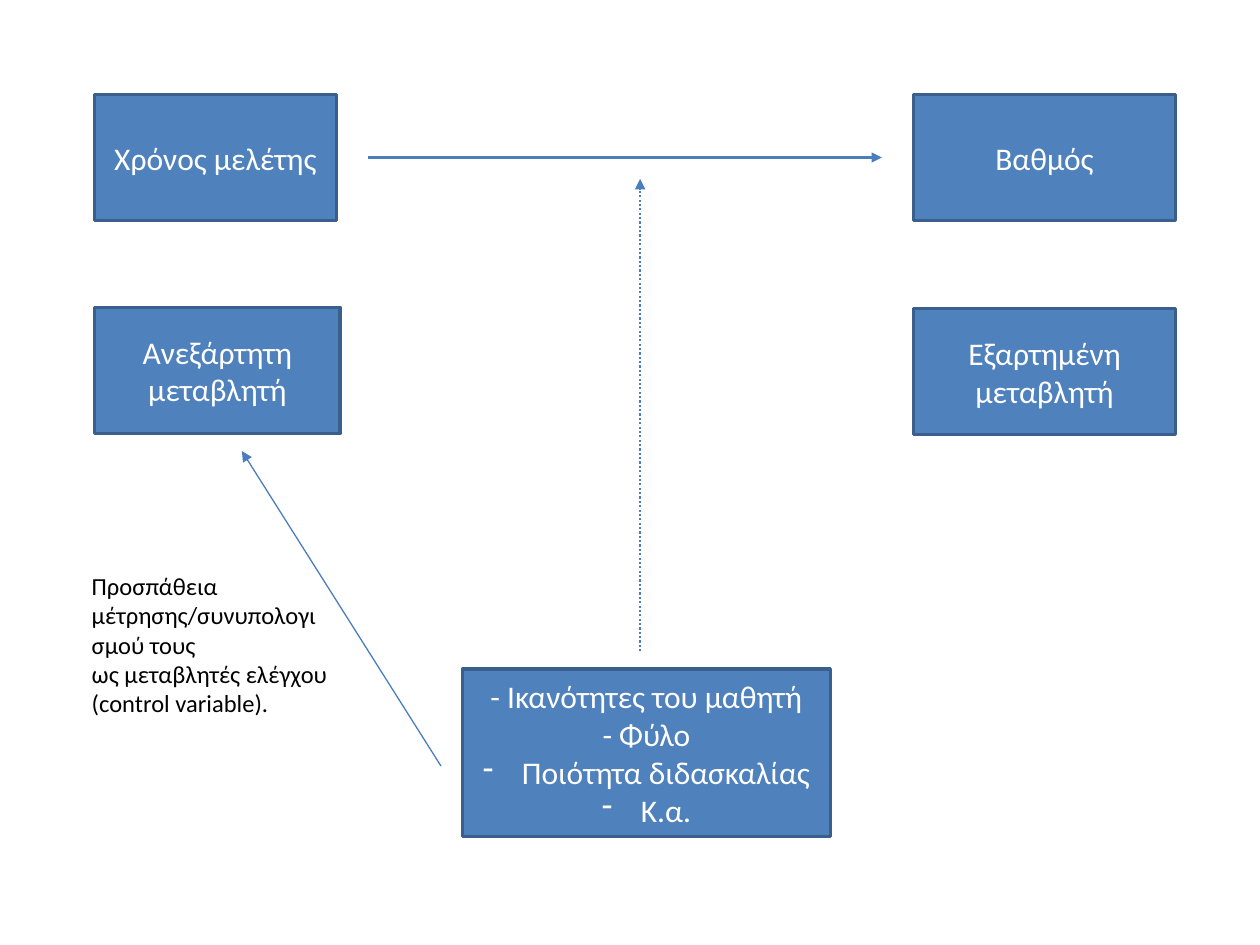
from lxml import etree
from pptx import Presentation
from pptx.dml.color import RGBColor
from pptx.enum.dml import MSO_LINE
from pptx.enum.shapes import MSO_CONNECTOR, MSO_SHAPE
from pptx.enum.text import MSO_ANCHOR, MSO_AUTO_SIZE, PP_ALIGN
from pptx.oxml.ns import qn
from pptx.util import Inches, Pt

RECT = MSO_SHAPE.RECTANGLE
LINE = MSO_CONNECTOR.STRAIGHT
DOTS = MSO_LINE.ROUND_DOT
CENTER = PP_ALIGN.CENTER
MIDDLE = MSO_ANCHOR.MIDDLE
FIT = MSO_AUTO_SIZE.SHAPE_TO_FIT_TEXT

COLORS = {"fill": "4F81BD", "edge": "3A5F8C", "arrow": "4B7EBC",
          "light": "FFFFFF", "dark": "000000"}
FONT = "Calibri"
INDENT = Inches(0.31)

# Left, top, width, height; then paragraphs as (text, has a dash bullet)
BOXES = [
    ((0.75, 0.75, 1.92, 1), [("Χρόνος μελέτης", False)]),
    ((7.25, 0.75, 2.08, 1), [("Βαθμός", False)]),
    ((0.75, 2.44, 1.95, 1), [("Ανεξάρτητη μεταβλητή", False)]),
    ((7.25, 2.45, 2.08, 1), [("Εξαρτημένη μεταβλητή", False)]),
    ((3.67, 5.31, 2.92, 1.33), [("- Ικανότητες του μαθητή", False),
                                ("- Φύλο", False),
                                ("Ποιότητα διδασκαλίας", True),
                                ("Κ.α.", True)]),
]
# Start, end, width in points, dash
ARROWS = [
    ((2.92, 1.25), (7, 1.25), 1.75, None),
    ((5.08, 5.17), (5.08, 1.42), 1.25, DOTS),
    ((3.5, 6.08), (1.92, 3.58), 0.75, None),
]
NOTE = ((0.63, 4.48, 2.07, 1.28),
        [("Προσπάθεια μέτρησης/συνυπολογισμού τους", False),
         ("ως μεταβλητές ελέγχου (control variable).", False)])


def color(name):
    return RGBColor.from_string(COLORS[name])


def add_dash(para):
    props = para._p.get_or_add_pPr()
    props.set("marL", str(INDENT))
    props.set("indent", str(-INDENT))
    etree.SubElement(props, qn("a:buFontTx"))
    etree.SubElement(props, qn("a:buChar"), char="-")


def write(frame, lines, size, ink, align=None):
    frame.word_wrap = True
    for i, (text, dash) in enumerate(lines):
        para = frame.add_paragraph() if i else frame.paragraphs[0]
        para.text = text
        para.alignment = align
        if dash:
            add_dash(para)
        para.font.name = FONT
        para.font.size = Pt(size)
        para.font.color.rgb = color(ink)


def add_box(slide, place, lines):
    box = slide.shapes.add_shape(RECT, *map(Inches, place))
    box.shadow.inherit = False
    box.fill.solid()
    box.fill.fore_color.rgb = color("fill")
    box.line.color.rgb = color("edge")
    box.line.width = Pt(2)
    box.text_frame.vertical_anchor = MIDDLE
    write(box.text_frame, lines, 18, "light", CENTER)


def add_arrow(slide, start, end, width, dash):
    arrow = slide.shapes.add_connector(LINE, *map(Inches, start + end))
    arrow.line.color.rgb = color("arrow")
    arrow.line.width = Pt(width)
    if dash:
        arrow.line.dash_style = dash
    props = arrow._element.spPr
    etree.SubElement(props.find(qn("a:ln")), qn("a:tailEnd"), type="triangle")
    etree.SubElement(props, qn("a:effectLst"))


def main():
    deck = Presentation()
    deck.slide_width, deck.slide_height = Inches(10), Inches(7.5)
    slide = deck.slides.add_slide(deck.slide_layouts[6])
    for box in BOXES:
        add_box(slide, *box)
    for arrow in ARROWS:
        add_arrow(slide, *arrow)
    place, lines = NOTE
    note = slide.shapes.add_textbox(*map(Inches, place))
    write(note.text_frame, lines, 14, "dark")
    note.text_frame.auto_size = FIT
    deck.save("out.pptx")


if __name__ == "__main__":
    main()
